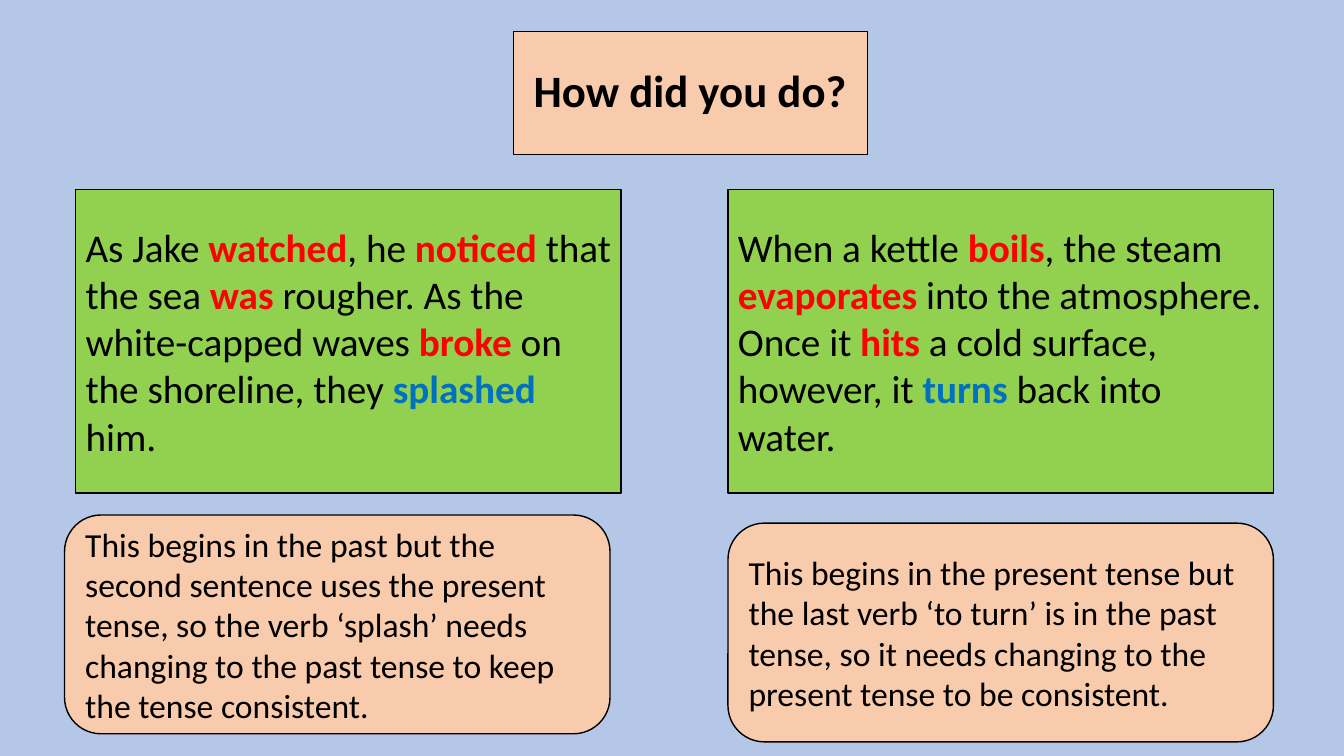
from pptx import Presentation
from pptx.dml.color import RGBColor
from pptx.enum.shapes import MSO_SHAPE
from pptx.enum.text import MSO_ANCHOR, MSO_AUTO_SIZE, PP_ALIGN
from pptx.util import Inches, Pt

COLOURS = {
    "background": "B4C7E7",
    "peach": "F8CBAD",
    "green": "92D050",
    "plain": "000000",
    "correct": "FF0000",
    "changed": "0070C0",
}
BOX_WIDTH = 5.41
LEFT_COLUMN, RIGHT_COLUMN = 0.75, 7.22

# Each sentence is a list of (text, role) spans
PAST_SENTENCES = [
    ("As Jake ", "plain"), ("watched", "correct"), (", he ", "plain"),
    ("noticed", "correct"), (" that the sea ", "plain"), ("was ", "correct"),
    ("rougher. As the white-capped waves ", "plain"), ("broke", "correct"),
    (" on the shoreline, they ", "plain"), ("splashed ", "changed"),
    ("him.", "plain"),
]
PRESENT_SENTENCES = [
    ("When a kettle ", "plain"), ("boils", "correct"),
    (", the steam ", "plain"), ("evaporates", "correct"),
    (" into the atmosphere. Once it ", "plain"), ("hits", "correct"),
    (" a cold surface, however, it ", "plain"), ("turns ", "changed"),
    ("back into water.", "plain"),
]
PAST_NOTE = (
    "This begins in the past but the second sentence uses the present tense, "
    "so the verb ‘splash’ needs changing to the past tense to keep the tense "
    "consistent."
)
PRESENT_NOTE = (
    "This begins in the present tense but the last verb ‘to turn’ is in the "
    "past tense, so it needs changing to the present tense to be consistent."
)


def colour(name):
    return RGBColor.from_string(COLOURS[name])


def set_attributes(target, values):
    for name, value in values.items():
        setattr(target, name, value)


def paint(box, fill, line_width):
    box.fill.solid()
    box.fill.fore_color.rgb = colour(fill)
    box.line.color.rgb = colour("plain")
    box.line.width = Pt(line_width)


def write(box, spans, size, paragraph_format):
    set_attributes(box.text_frame, {
        "word_wrap": True,
        "auto_size": MSO_AUTO_SIZE.NONE,
        "vertical_anchor": MSO_ANCHOR.MIDDLE,
    })
    para = box.text_frame.paragraphs[0]
    set_attributes(para, paragraph_format)
    for text, role in spans:
        span = para.add_run()
        span.text = text
        set_attributes(span.font, {
            "name": "Calibri", "size": Pt(size), "bold": role != "plain",
        })
        span.font.color.rgb = colour(role)


def add_title(page, text):
    title = page.shapes.title
    set_attributes(title, {
        "left": Inches(5.09), "top": Inches(0.31),
        "width": Inches(3.51), "height": Inches(1.22),
    })
    paint(title, "peach", 0.75)
    write(title, [(text, "plain")], 32,
          {"alignment": PP_ALIGN.CENTER, "line_spacing": 0.9})
    title.text_frame.paragraphs[0].runs[0].font.bold = True


def add_box(page, outline, left, top, height, fill, spans, size):
    box = page.shapes.add_shape(outline, Inches(left), Inches(top),
                                Inches(BOX_WIDTH), Inches(height))
    box.shadow.inherit = False
    paint(box, fill, 1)
    write(box, spans, size, {"alignment": PP_ALIGN.LEFT})


def add_sentence_box(page, left, spans):
    add_box(page, MSO_SHAPE.RECTANGLE, left, 1.88, 3.01, "green", spans, 28)


def add_note_box(page, left, top, text):
    add_box(page, MSO_SHAPE.ROUNDED_RECTANGLE, left, top, 2.17, "peach",
            [(text, "plain")], 24)


def main():
    deck = Presentation()
    deck.slide_width, deck.slide_height = Inches(13.33), Inches(7.5)
    page = deck.slides.add_slide(deck.slide_layouts[5])
    page.background.fill.solid()
    page.background.fill.fore_color.rgb = colour("background")

    add_title(page, "How did you do?")

    # Corrected sentences
    add_sentence_box(page, LEFT_COLUMN, PAST_SENTENCES)
    add_sentence_box(page, RIGHT_COLUMN, PRESENT_SENTENCES)

    # Explanations
    add_note_box(page, 0.64, 5.11, PAST_NOTE)
    add_note_box(page, RIGHT_COLUMN, 5.19, PRESENT_NOTE)

    deck.save("out.pptx")


if __name__ == "__main__":
    main()
